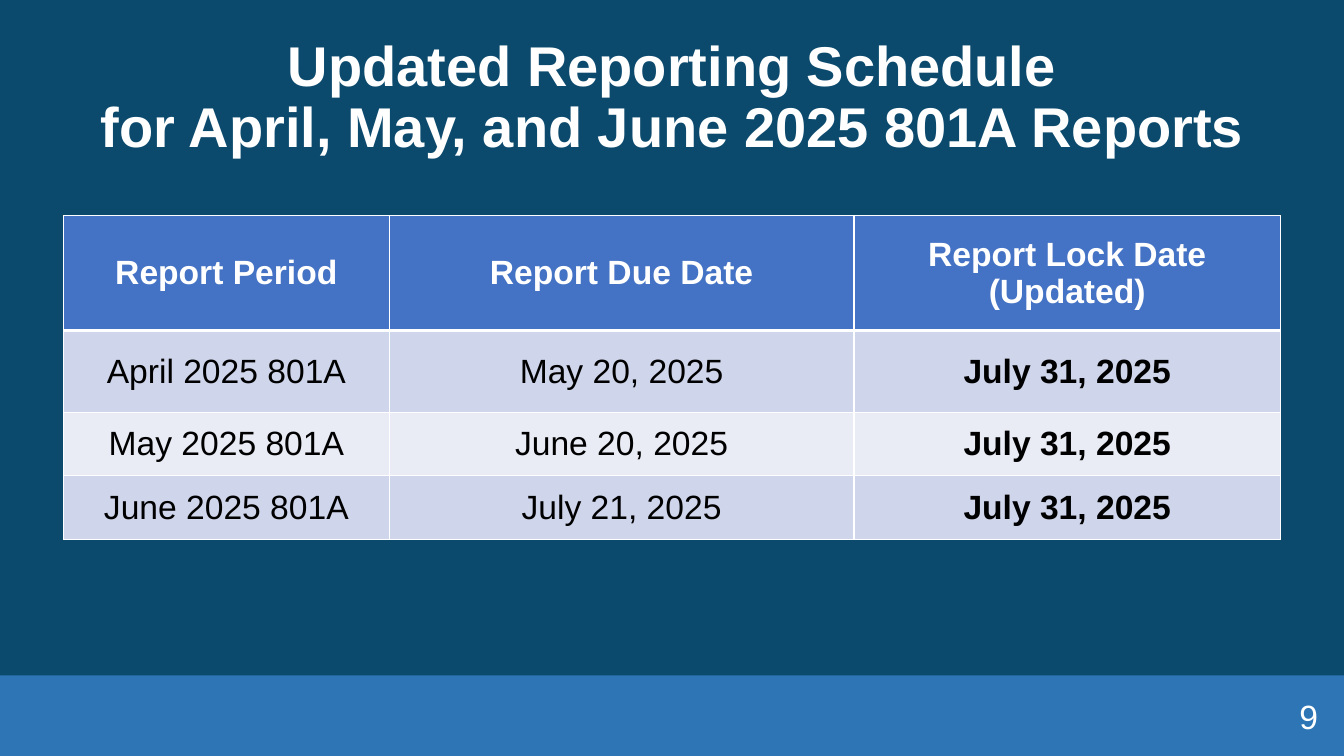
from dataclasses import dataclass

from lxml.etree import SubElement
from pptx import Presentation
from pptx.dml.color import RGBColor
from pptx.enum.shapes import MSO_SHAPE as Shape
from pptx.enum.text import MSO_ANCHOR as Anchor, PP_ALIGN as Align
from pptx.oxml.ns import qn
from pptx.util import Inches, Pt

TITLE_LINES = ["Updated Reporting Schedule", "for April, May, and June 2025 801A Reports"]
SCHEDULE = [
    ("Report Period", "Report Due Date", "Report Lock Date\n(Updated)"),
    ("April 2025 801A", "May 20, 2025", "July 31, 2025"),
    ("May 2025 801A", "June 20, 2025", "July 31, 2025"),
    ("June 2025 801A", "July 21, 2025", "July 31, 2025"),
]
PAGE_NUMBER = "9"

SLIDE_WIDTH, SLIDE_HEIGHT = 13.33, 7.5
FOOTER_HEIGHT = 0.8
COLUMN_WIDTHS = [3.23, 4.61, 4.23]
ROW_HEIGHTS = [1.14, 0.81, 0.63, 0.63]


@dataclass(frozen=True)
class Theme:
    font: str = "Arial"
    background: str = "0C4A6D"
    footer: str = "2E75B6"
    header: str = "4472C4"
    bands: tuple = ("CFD5EA", "E9EBF5")
    light: str = "FFFFFF"
    dark: str = "000000"
    title_size: int = 40
    body_size: int = 24
    border: int = 1
    header_border: int = 3


THEME = Theme()


def paint(fill, color):
    fill.solid()
    fill.fore_color.rgb = RGBColor.from_string(color)


def style_text(frame, size, color, align, bold=False):
    for para in frame.paragraphs:
        para.alignment = align
        for span in para.runs:
            span.font.name = THEME.font
            span.font.size = Pt(size)
            span.font.bold = bold
            span.font.color.rgb = RGBColor.from_string(color)


def add_text_box(page, left, top, width, height):
    box = page.shapes.add_textbox(Inches(left), Inches(top), Inches(width), Inches(height))
    frame = box.text_frame
    frame.word_wrap = True
    frame.vertical_anchor = Anchor.MIDDLE
    return frame


def set_borders(cell, top, bottom):
    properties = cell._tc.get_or_add_tcPr()
    widths = {"L": THEME.border, "R": THEME.border, "T": top, "B": bottom}
    for side, width in widths.items():
        line = SubElement(properties, qn(f"a:ln{side}"), w=str(Pt(width)))
        solid = SubElement(line, qn("a:solidFill"))
        SubElement(solid, qn("a:srgbClr"), val=THEME.light)


def add_footer(page):
    band = page.shapes.add_shape(
        Shape.RECTANGLE, 0, Inches(SLIDE_HEIGHT - FOOTER_HEIGHT),
        Inches(SLIDE_WIDTH), Inches(FOOTER_HEIGHT))
    band.shadow.inherit = False
    paint(band.fill, THEME.footer)
    band.line.fill.background()


def add_title(page):
    frame = add_text_box(page, 0.28, 0.31, 12.77, 1.34)
    para = frame.paragraphs[0]
    para.line_spacing = 0.9
    for index, line in enumerate(TITLE_LINES):
        if index:
            para.add_line_break()
        para.add_run().text = line
    style_text(frame, THEME.title_size, THEME.light, Align.CENTER, bold=True)


def add_schedule(page):
    table = page.shapes.add_table(
        len(SCHEDULE), len(COLUMN_WIDTHS), Inches(0.63), Inches(2.14),
        Inches(sum(COLUMN_WIDTHS)), Inches(sum(ROW_HEIGHTS))).table
    for column, width in zip(table.columns, COLUMN_WIDTHS):
        column.width = Inches(width)
    for row, height in zip(table.rows, ROW_HEIGHTS):
        row.height = Inches(height)

    last_column = len(COLUMN_WIDTHS) - 1
    for r, values in enumerate(SCHEDULE):
        is_header = r == 0
        fill = THEME.header if is_header else THEME.bands[(r - 1) % 2]
        color = THEME.light if is_header else THEME.dark
        top = THEME.header_border if r == 1 else THEME.border
        bottom = THEME.header_border if is_header else THEME.border
        for c, value in enumerate(values):
            cell = table.cell(r, c)
            cell.text_frame.text = value
            cell.vertical_anchor = Anchor.MIDDLE
            set_borders(cell, top, bottom)
            paint(cell.fill, fill)
            style_text(cell.text_frame, THEME.body_size, color, Align.CENTER,
                       bold=is_header or c == last_column)


def add_page_number(page):
    frame = add_text_box(page, 10.17, 6.9, 3, 0.4)
    frame.text = PAGE_NUMBER
    style_text(frame, THEME.body_size, THEME.light, Align.RIGHT)


def main():
    deck = Presentation()
    deck.slide_width = Inches(SLIDE_WIDTH)
    deck.slide_height = Inches(SLIDE_HEIGHT)
    page = deck.slides.add_slide(deck.slide_layouts[6])
    paint(page.background.fill, THEME.background)
    add_footer(page)
    add_title(page)
    add_schedule(page)
    add_page_number(page)
    deck.save("out.pptx")


if __name__ == "__main__":
    main()
